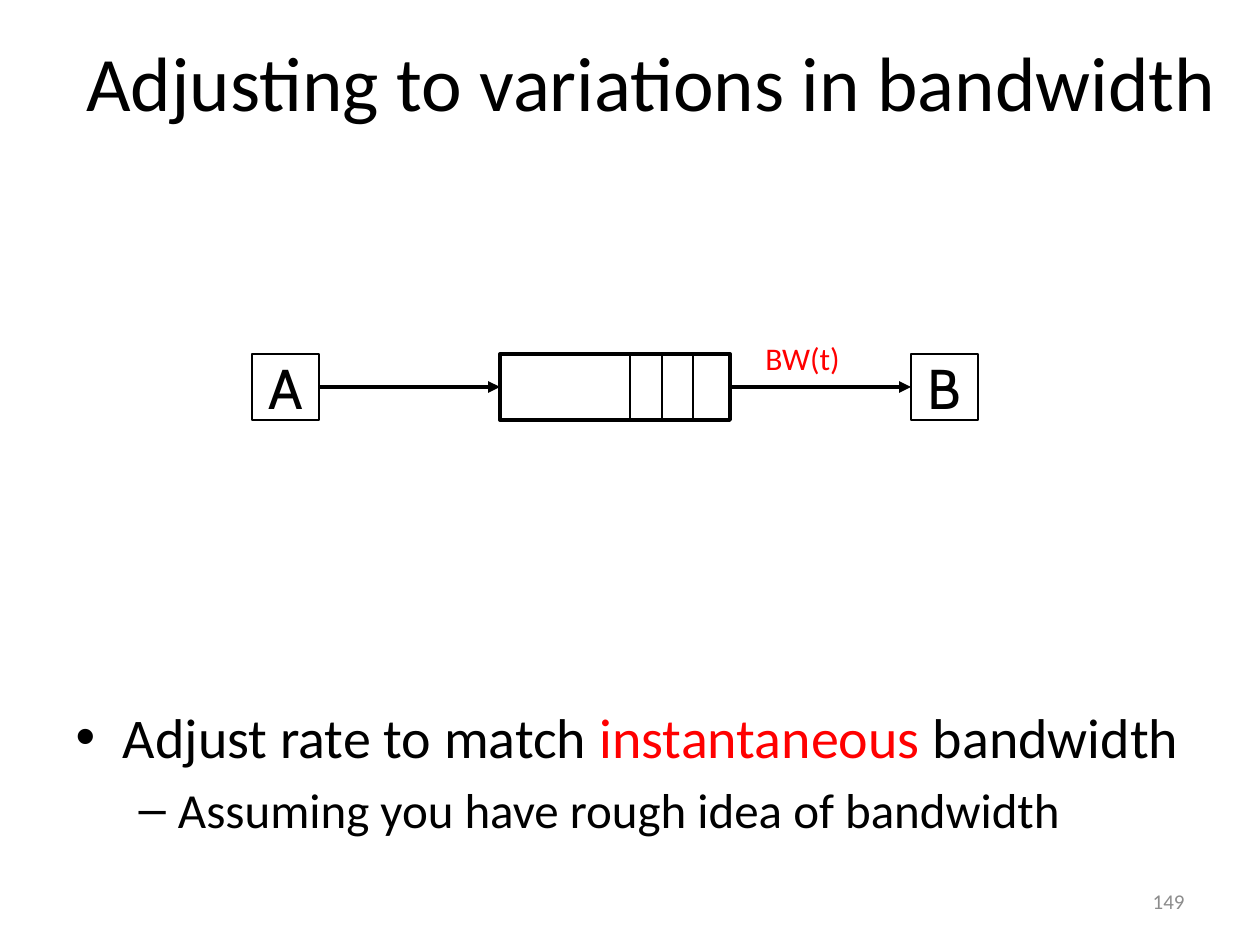
from lxml import etree
from pptx import Presentation
from pptx.dml.color import RGBColor
from pptx.enum.shapes import MSO_CONNECTOR, MSO_SHAPE
from pptx.enum.text import MSO_ANCHOR, MSO_AUTO_SIZE, PP_ALIGN
from pptx.oxml.ns import qn
from pptx.util import Pt

RECTANGLE = MSO_SHAPE.RECTANGLE
STRAIGHT = MSO_CONNECTOR.STRAIGHT
MIDDLE = MSO_ANCHOR.MIDDLE
NO_FIT = MSO_AUTO_SIZE.NONE
CENTER, RIGHT = PP_ALIGN.CENTER, PP_ALIGN.RIGHT

PX = 914400 / 126
COLORS = {
    name: RGBColor.from_string(value)
    for name, value in {
        "black": "000000", "white": "FFFFFF", "red": "FF0000", "gray": "8C8C8C",
    }.items()
}


def px(*lengths):
    return [round(length * PX) for length in lengths]


def style_font(font, name, size, color):
    font.name = name
    font.size = Pt(size)
    font.color.rgb = COLORS[color]


presentation = Presentation()
presentation.slide_width, presentation.slide_height = px(1260, 945)
slide = presentation.slides.add_slide(presentation.slide_layouts[1])

# Title and bullet list
title, body = slide.placeholders
for placeholder, box in ((title, (32, 0, 1239, 161)), (body, (63, 696, 1134, 152))):
    placeholder.left, placeholder.top, placeholder.width, placeholder.height = px(*box)
    placeholder.text_frame.auto_size = NO_FIT

title.text_frame.text = "Adjusting to variations in bandwidth"
style_font(title.text_frame.paragraphs[0].font, "Calibri", 44, "black")

bullet = body.text_frame.paragraphs[0]
bullet.space_before = Pt(0)
for text, color in (
    ("Adjust rate to match ", "black"),
    ("instantaneous", "red"),
    (" bandwidth", "black"),
):
    run = bullet.add_run()
    run.text = text
    style_font(run.font, "Calibri", 32, color)

sub_bullet = body.text_frame.add_paragraph()
sub_bullet.level = 1
sub_bullet.text = "Assuming you have rough idea of bandwidth"
style_font(sub_bullet.font, "Calibri", 28, "black")

# Sender A, queue and receiver B
diagram = slide.shapes.add_group_shape()
box_top, box_height = 354, 66
for label, left, width, line_width in (
    ("A", 252, 67, 0.75),
    ("", 500, 230, 2.25),
    ("B", 911, 67, 0.75),
):
    node = diagram.shapes.add_shape(RECTANGLE, *px(left, box_top, width, box_height))
    node.shadow.inherit = False
    node.fill.solid()
    node.fill.fore_color.rgb = COLORS["white"]
    node.line.color.rgb = COLORS["black"]
    node.line.width = Pt(line_width)
    if label:
        frame = node.text_frame
        frame.word_wrap = False
        frame.vertical_anchor = MIDDLE
        frame.margin_left, frame.margin_right = px(8, 8)
        frame.margin_top, frame.margin_bottom = px(4, 4)
        frame.text = label
        frame.paragraphs[0].alignment = CENTER
        style_font(frame.paragraphs[0].font, "Cabin", 32, "black")

# Arrows between the nodes, then the packet dividers in the queue
middle = box_top + box_height // 2
arrows = [(319, middle, 500, middle, 2.25), (730, middle, 911, middle, 2.25)]
dividers = [(x, box_top - 1, x, box_top + box_height, 1) for x in (693, 662, 630)]
for *ends, line_width in arrows + dividers:
    connector = diagram.shapes.add_connector(STRAIGHT, *px(*ends))
    connector.line.color.rgb = COLORS["black"]
    connector.line.width = Pt(line_width)
    properties = connector.element.spPr
    etree.SubElement(properties, qn("a:effectLst"))
    if ends[1] == ends[3]:
        etree.SubElement(properties.find(qn("a:ln")), qn("a:tailEnd"), type="triangle")

# Bandwidth label
bandwidth = slide.shapes.add_textbox(*px(753, 333, 131, 54))
bandwidth.text_frame.word_wrap = False
bandwidth.text_frame.text = "BW(t)"
style_font(bandwidth.text_frame.paragraphs[0].font, "Calibri", 18, "red")

# Page number
page_number = slide.shapes.add_textbox(*px(903, 876, 294, 50))
page_number.text_frame.word_wrap = True
page_number.text_frame.vertical_anchor = MIDDLE
page_number.text_frame.text = "149"
page_number.text_frame.paragraphs[0].alignment = RIGHT
style_font(page_number.text_frame.paragraphs[0].font, "Calibri", 12, "gray")

presentation.save("out.pptx")
